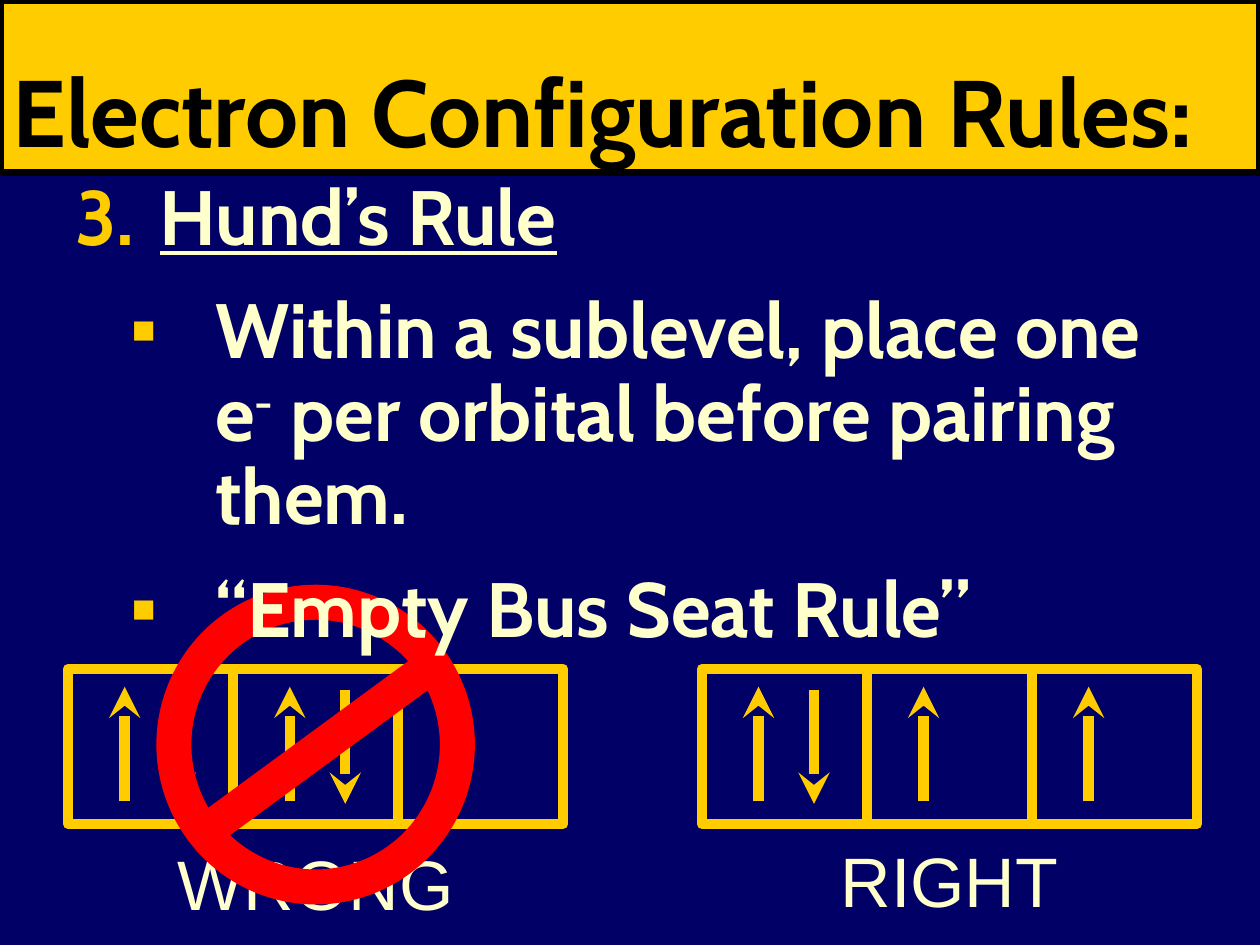
from lxml import etree
from pptx import Presentation
from pptx.dml.color import RGBColor
from pptx.enum.shapes import MSO_CONNECTOR, MSO_SHAPE
from pptx.enum.text import MSO_ANCHOR, PP_ALIGN
from pptx.oxml.ns import qn
from pptx.util import Inches, Pt

STRAIGHT = MSO_CONNECTOR.STRAIGHT
RECTANGLE = MSO_SHAPE.RECTANGLE
OVAL = MSO_SHAPE.OVAL
CENTER = PP_ALIGN.CENTER
LEFT = PP_ALIGN.LEFT
TOP = MSO_ANCHOR.TOP
BOTTOM = MSO_ANCHOR.BOTTOM

NAVY = RGBColor(0x00, 0x00, 0x66)
GOLD = RGBColor(0xFF, 0xCC, 0x00)
CREAM = RGBColor(0xFF, 0xFF, 0xCC)
RED = RGBColor(0xFF, 0x00, 0x00)
BLACK = RGBColor(0x00, 0x00, 0x00)

TITLE = "Electron Configuration Rules:"
RULE = "Hund’s Rule"
POINTS = [
    [("Within a sublevel, place one e", False), ("-", True),
     (" per orbital before pairing them.", False)],
    [("“Empty Bus Seat Rule”", False)],
]
DIAGRAMS = [
    {"label": "WRONG", "left": 0.54, "electrons": [2, 2, 0], "label_box": (0.95, 6.42, 3.11, 0.97)},
    {"label": "RIGHT", "left": 5.57, "electrons": [2, 1, 1], "label_box": (6.15, 6.4, 2.77, 0.97)},
]
CELL_TOP, CELL_WIDTH, CELL_HEIGHT = 5.31, 1.31, 1.23
SPINS = [(0.45, 6.36, 5.45), (0.89, 5.48, 6.38)]


def add_line(slide, start, end, color, width, arrow=False):
    line = slide.shapes.add_connector(STRAIGHT, *map(Inches, start + end))
    line.line.color.rgb = color
    line.line.width = Pt(width)
    if arrow:
        etree.SubElement(line.line._get_or_add_ln(), qn("a:tailEnd"), type="stealth")
    etree.SubElement(line._element.spPr, qn("a:effectLst"))


def add_outline(slide, kind, box, color, width):
    shape = slide.shapes.add_shape(kind, *map(Inches, box))
    shape.shadow.inherit = False
    shape.fill.background()
    shape.line.color.rgb = color
    shape.line.width = Pt(width)
    return shape


def set_font(paragraph, name, size, color, bold=False):
    font = paragraph.font
    font.name, font.size, font.bold = name, Pt(size), bold
    font.color.rgb = color


def add_text_box(slide, box):
    frame = slide.shapes.add_textbox(*map(Inches, box)).text_frame
    frame.word_wrap = True
    frame.vertical_anchor = TOP
    return frame


def add_bullet(paragraph, indent, tag, **attributes):
    properties = paragraph._p.get_or_add_pPr()
    properties.set("marL", str(Inches(indent)))
    properties.set("indent", str(Inches(-0.67)))
    color = etree.SubElement(properties, qn("a:buClr"))
    etree.SubElement(color, qn("a:srgbClr"), val=str(GOLD))
    etree.SubElement(properties, qn("a:buFont"), typeface="Cabin" if tag == "a:buAutoNum" else "Arial")
    etree.SubElement(properties, qn(tag), **attributes)


def add_arrows(slide):
    for diagram in DIAGRAMS:
        for index, count in enumerate(diagram["electrons"]):
            for offset, start, end in SPINS[:count]:
                x = diagram["left"] + index * CELL_WIDTH + offset
                add_line(slide, (x, start), (x, end), GOLD, 6, arrow=True)


def add_labels(slide):
    for diagram in DIAGRAMS:
        paragraph = add_text_box(slide, diagram["label_box"]).paragraphs[0]
        paragraph.text = diagram["label"]
        paragraph.alignment = CENTER
        paragraph.line_spacing = 1.3
        paragraph.space_before = Pt(18)
        set_font(paragraph, "Arial", 40, CREAM)


def add_title(slide):
    banner = add_outline(slide, RECTANGLE, (0, 0, 10, 1.37), BLACK, 4.5)
    banner.fill.solid()
    banner.fill.fore_color.rgb = GOLD
    banner.text_frame.vertical_anchor = BOTTOM
    banner.text_frame.word_wrap = True
    paragraph = banner.text_frame.paragraphs[0]
    paragraph.text = TITLE
    paragraph.alignment = LEFT
    set_font(paragraph, "Cabin", 54, BLACK, bold=True)


def add_cells(slide):
    for diagram in DIAGRAMS:
        for index in range(len(diagram["electrons"])):
            left = diagram["left"] + index * CELL_WIDTH
            add_outline(slide, RECTANGLE, (left, CELL_TOP, CELL_WIDTH, CELL_HEIGHT), GOLD, 6)


def add_body(slide):
    frame = add_text_box(slide, (0.5, 1.37, 8.94, 3.05))
    heading = frame.paragraphs[0]
    heading.text = RULE
    heading.line_spacing = 0.9
    set_font(heading, "Cabin", 44, CREAM, bold=True)
    heading.font.underline = True
    add_bullet(heading, 0.67, "a:buAutoNum", type="arabicPeriod", startAt="3")
    for point in POINTS:
        paragraph = frame.add_paragraph()
        paragraph.level = 1
        paragraph.line_spacing = 0.9
        paragraph.space_before = Pt(17)
        set_font(paragraph, "Cabin", 44, CREAM, bold=True)
        add_bullet(paragraph, 1.11, "a:buChar", char="▪")
        for text, raised in point:
            run = paragraph.add_run()
            run.text = text
            if raised:
                run.font._element.set("baseline", "30000")


def main():
    presentation = Presentation()
    presentation.slide_width, presentation.slide_height = Inches(10), Inches(7.5)
    slide = presentation.slides.add_slide(presentation.slide_layouts[6])
    slide.background.fill.solid()
    slide.background.fill.fore_color.rgb = NAVY
    add_arrows(slide)
    add_labels(slide)
    add_title(slide)
    add_cells(slide)
    add_outline(slide, OVAL, (1.38, 4.78, 2.25, 2.26), RED, 20)
    add_line(slide, (1.63, 6.6), (3.43, 5.28), RED, 20)
    add_body(slide)
    presentation.save("out.pptx")


if __name__ == "__main__":
    main()
